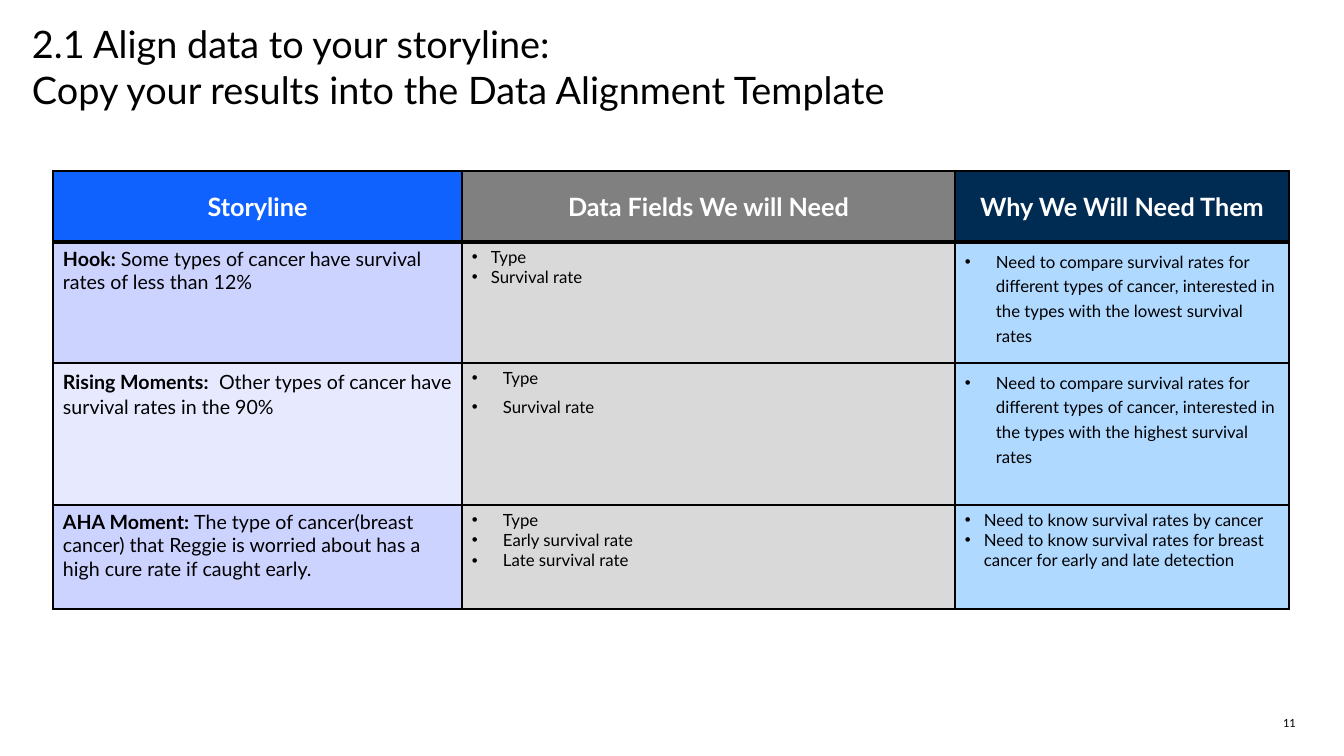
from lxml.etree import SubElement
from pptx import Presentation
from pptx.dml.color import RGBColor
from pptx.enum.text import MSO_ANCHOR as ANCHOR, MSO_AUTO_SIZE as FIT, PP_ALIGN as ALIGN
from pptx.oxml.ns import qn
from pptx.util import Emu, Pt

FONT = "Lato"
COLORS = {
    "black": "000000", "white": "FFFFFF", "blue": "0F62FE", "gray": "808080",
    "navy": "002B52", "lilac": "CCD3FF", "pale": "E7EAFF", "silver": "D9D9D9",
    "sky": "AFD9FF",
}
COLUMNS = [409, 493, 334]
ROWS = [71, 121, 142, 104]
HEADERS = [
    ("Storyline", "blue"),
    ("Data Fields We will Need", "gray"),
    ("Why We Will Need Them", "navy"),
]
COMPARE = ("Need to compare survival rates for different types of cancer, "
           "interested in the types with the {} survival rates")
NARROW, WIDE = 19, 31
STORY = [
    {
        "fill": "lilac",
        "story": [("Hook: ", 14, True),
                  ("Some types of cancer have survival rates of less than 12%", 14, False)],
        "fields": (["Type", "Survival rate"], NARROW, None, 0),
        "reasons": ([COMPARE.format("lowest")], WIDE, 1.23, 0),
    },
    {
        "fill": "pale",
        "story": [("Rising Moments: ", 14, True), (" ", 16, True),
                  ("Other types of cancer have survival rates in the 90%", 14, False)],
        "fields": (["Type", "Survival rate"], WIDE, None, 6),
        "reasons": ([COMPARE.format("highest")], WIDE, 1.23, 6),
    },
    {
        "fill": "lilac",
        "story": [("AHA Moment: ", 14, True),
                  ("The type of cancer(breast cancer) that Reggie is worried about has "
                   "a high cure rate if caught early.", 14, False)],
        "fields": (["Type", "Early survival rate", "Late survival rate"], WIDE, None, 0),
        "reasons": (["Need to know survival rates by cancer",
                     "Need to know survival rates for breast cancer for early and late detection"],
                    NARROW, None, 0),
    },
]


def px(n):
    return Emu(round(n * 914400 / 100.8))


def rgb(name):
    return RGBColor.from_string(COLORS[name])


def style(font, size, color="black", bold=False):
    font.name, font.size, font.bold = FONT, Pt(size), bold
    font.color.rgb = rgb(color)


def clear_margins(tf):
    tf.margin_left = tf.margin_right = tf.margin_top = tf.margin_bottom = 0


def add_title(s, text):
    sp = s.shapes.title
    sp.left, sp.top, sp.width, sp.height = px(32), px(21), px(1280), px(92)
    tf = sp.text_frame
    tf.text = text
    clear_margins(tf)
    tf.word_wrap, tf.auto_size, tf.vertical_anchor = True, FIT.NONE, ANCHOR.TOP
    p = tf.paragraphs[0]
    p.alignment = ALIGN.LEFT
    for r in p.runs:
        style(r.font, 27)


def add_page_number(s, number):
    tf = s.shapes.add_textbox(px(1283), px(717), px(14), px(13)).text_frame
    tf.text = number
    clear_margins(tf)
    tf.word_wrap, tf.vertical_anchor = False, ANCHOR.MIDDLE
    style(tf.paragraphs[0].runs[0].font, 8)


def format_cell(cell, fill, top=1, bottom=1):
    tc_pr = cell._tc.get_or_add_tcPr()
    for side, width in (("L", 1), ("R", 1), ("T", top), ("B", bottom)):
        ln = SubElement(tc_pr, qn(f"a:ln{side}"), w=str(Pt(width)))
        SubElement(SubElement(ln, qn("a:solidFill")), qn("a:srgbClr"), val=COLORS["black"])
    cell.fill.solid()
    cell.fill.fore_color.rgb = rgb(fill)
    cell.margin_left = cell.margin_right = px(10)
    cell.margin_top = cell.margin_bottom = px(5)


def write_header(cell, text):
    cell.text = text
    cell.vertical_anchor = ANCHOR.MIDDLE
    p = cell.text_frame.paragraphs[0]
    p.alignment = ALIGN.CENTER
    style(p.runs[0].font, 18, "white", True)


def write_story(cell, parts):
    p = cell.text_frame.paragraphs[0]
    for text, size, bold in parts:
        r = p.add_run()
        r.text = text
        style(r.font, size, bold=bold)


def write_bullets(cell, items, indent, line_spacing, space_after):
    tf = cell.text_frame
    tf.text = "\n".join(items)
    for p in tf.paragraphs:
        p_pr = p._p.get_or_add_pPr()
        p_pr.set("marL", str(px(indent)))
        p_pr.set("indent", str(-px(indent)))
        SubElement(p_pr, qn("a:buFont"), typeface="Arial")
        SubElement(p_pr, qn("a:buChar"), char="•")
        p.line_spacing = line_spacing
        p.space_after = Pt(space_after)
        style(p.runs[0].font, 12)


def add_alignment_table(s):
    frame = s.shapes.add_table(len(ROWS), len(COLUMNS), px(53), px(171),
                               px(sum(COLUMNS)), px(sum(ROWS)))
    table = frame.table
    for column, width in zip(table.columns, COLUMNS):
        column.width = px(width)
    for row, height in zip(table.rows, ROWS):
        row.height = px(height)
    for j, (text, fill) in enumerate(HEADERS):
        cell = table.cell(0, j)
        format_cell(cell, fill, bottom=3)
        write_header(cell, text)
    for i, moment in enumerate(STORY, 1):
        story, fields, reasons = table.rows[i].cells
        for cell, fill in ((story, moment["fill"]), (fields, "silver"), (reasons, "sky")):
            format_cell(cell, fill, top=3 if i == 1 else 1)
        write_story(story, moment["story"])
        write_bullets(fields, *moment["fields"])
        write_bullets(reasons, *moment["reasons"])


def main():
    prs = Presentation()
    prs.slide_width, prs.slide_height = px(1344), px(756)
    s = prs.slides.add_slide(prs.slide_layouts[5])
    add_title(s, "2.1 Align data to your storyline:\vCopy your results into the Data Alignment Template")
    add_alignment_table(s)
    add_page_number(s, "11")
    prs.save("out.pptx")


if __name__ == "__main__":
    main()
